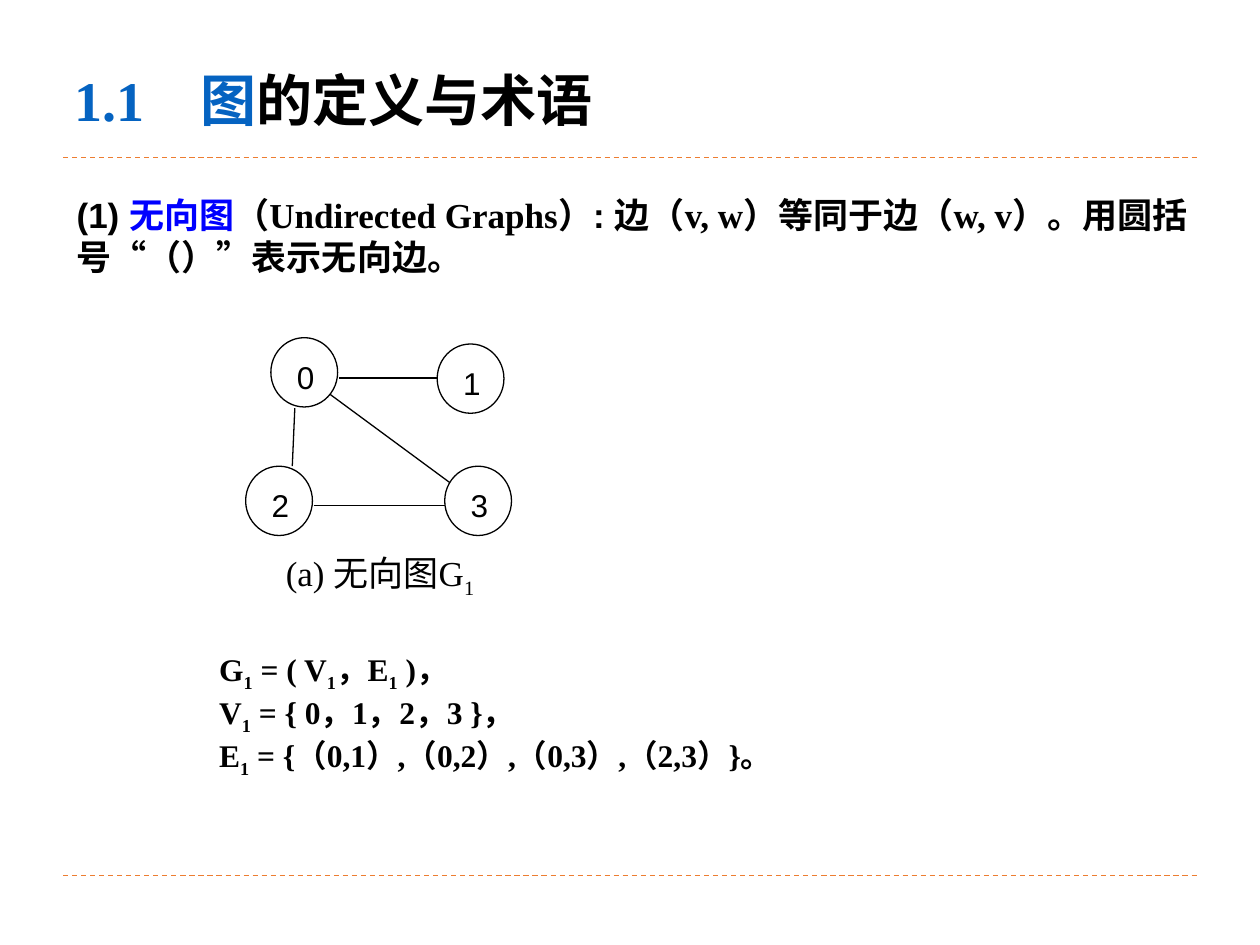
from lxml import etree
from pptx import Presentation
from pptx.dml.color import RGBColor
from pptx.enum.dml import MSO_LINE
from pptx.enum.shapes import MSO_CONNECTOR, MSO_SHAPE
from pptx.enum.text import MSO_ANCHOR, MSO_AUTO_SIZE, PP_ALIGN
from pptx.oxml.ns import qn
from pptx.util import Inches, Pt

DASH = MSO_LINE.DASH
STRAIGHT = MSO_CONNECTOR.STRAIGHT
OVAL, RECTANGLE = MSO_SHAPE.OVAL, MSO_SHAPE.RECTANGLE
TOP, LEFT, CENTER = MSO_ANCHOR.TOP, PP_ALIGN.LEFT, PP_ALIGN.CENTER
NO_AUTOFIT = MSO_AUTO_SIZE.NONE

COLORS = {"ink": "000000", "paper": "FFFFFF", "rule": "ED7D31",
          "heading": "0563C1", "term": "0000FF"}
SERIF, SANS = "Times New Roman", "Arial"


def rgb(name):
    return RGBColor.from_string(COLORS[name])


def add_run(paragraph, text, size, color="ink", font=SERIF, bold=False):
    run = paragraph.add_run()
    run.text = text
    run.font.size = Pt(size)
    run.font.name = font
    run.font.bold = bold
    run.font.color.rgb = rgb(color)
    return run


def add_indexed(paragraph, text, size, bold=False):
    """Write text in which every second part between underscores is a subscript."""
    for i, part in enumerate(text.split("_")):
        run = add_run(paragraph, part, size, bold=bold)
        if i % 2:
            run._r.get_or_add_rPr().set("baseline", "-25000")


def add_text_frame(slide, left, top, width, height):
    box = slide.shapes.add_textbox(Inches(left), Inches(top), Inches(width), Inches(height))
    box.text_frame.word_wrap = True
    return box.text_frame


def add_line(shapes, start, end, color="ink", dash=None):
    line = shapes.add_connector(STRAIGHT, *(Inches(v) for v in (*start, *end)))
    line.line.color.rgb = rgb(color)
    line.line.width = Pt(0.75)
    if dash is not None:
        line.line.dash_style = dash
    etree.SubElement(line._element.spPr, qn("a:effectLst"))


def add_plain_shape(shapes, kind, left, top, width, height):
    shape = shapes.add_shape(kind, Inches(left), Inches(top), Inches(width), Inches(height))
    shape.shadow.inherit = False
    shape.fill.solid()
    shape.fill.fore_color.rgb = rgb("paper")
    return shape


def add_node(shapes, label, left, top):
    circle = add_plain_shape(shapes, OVAL, left, top, 0.53, 0.55)
    circle.line.color.rgb = rgb("ink")
    circle.line.width = Pt(0.75)
    tag = add_plain_shape(shapes, RECTANGLE, left + 0.17, top + 0.16, 0.21, 0.24)
    tag.line.fill.background()
    frame = tag.text_frame
    frame.margin_left = frame.margin_right = frame.margin_top = frame.margin_bottom = 0
    frame.vertical_anchor = TOP
    frame.paragraphs[0].alignment = CENTER
    add_run(frame.paragraphs[0], label, 18, font=SANS)


def add_graph(slide, left, top):
    nodes = {"0": (0.2, 0), "1": (1.52, 0.05), "2": (0, 1.02), "3": (1.58, 1.02)}
    edges = [((0.74, 0.32), (1.52, 0.32)), ((0.67, 0.45), (1.62, 1.15)),
             ((0.39, 0.56), (0.37, 1.02)), ((0.54, 1.33), (1.58, 1.33))]
    shapes = slide.shapes.add_group_shape().shapes
    for edge in edges:
        add_line(shapes, *((left + x, top + y) for x, y in edge))
    for label, (x, y) in nodes.items():
        add_node(shapes, label, left + x, top + y)


def add_title(slide, left, top, width, height):
    title = slide.shapes.title
    title.left, title.top = Inches(left), Inches(top)
    title.width, title.height = Inches(width), Inches(height)
    frame = title.text_frame
    frame.auto_size = NO_AUTOFIT
    frame.vertical_anchor = TOP
    frame.margin_left, frame.margin_right = Inches(0.12), Inches(0.16)
    heading = frame.paragraphs[0]
    heading.alignment = LEFT
    tabs = etree.SubElement(heading._p.get_or_add_pPr(), qn("a:tabLst"))
    etree.SubElement(tabs, qn("a:tab"), pos=str(Inches(1)), algn="l")
    add_run(heading, "1.1\t图", 32, "heading", bold=True)
    add_run(heading, "的定义与术语", 32, bold=True)


def add_definition(slide, left, top, width, height):
    paragraph = add_text_frame(slide, left, top, width, height).paragraphs[0]
    for text, color, font in [
            ("(1) ", "ink", SANS), ("无向图", "term", SERIF),
            ("（Undirected Graphs）", "ink", SERIF), (": ", "ink", SANS),
            ("边（v, w）等同于边（w, v）。用圆括号“（）”表示无向边。", "ink", SERIF)]:
        add_run(paragraph, text, 20, color, font, bold=True)


def add_caption(slide, left, top, width, height):
    frame = add_text_frame(slide, left, top, width, height)
    add_indexed(frame.paragraphs[0], "(a) 无向图G_1", 20)


def add_formulas(slide, left, top, width, height):
    frame = add_text_frame(slide, left, top, width, height)
    formulas = ["G_1_ = ( V_1_，E_1_ )，",
                "V_1_ = { 0，1，2，3 }，",
                "E_1_ = {（0,1）,（0,2）,（0,3）,（2,3）}。"]
    for i, formula in enumerate(formulas):
        paragraph = frame.add_paragraph() if i else frame.paragraphs[0]
        add_indexed(paragraph, formula, 18, bold=True)


def main():
    prs = Presentation()
    prs.slide_width, prs.slide_height = Inches(10), Inches(7.5)
    slide = prs.slides.add_slide(prs.slide_layouts[5])
    for y in (1.25, 6.95):
        add_line(slide.shapes, (0.5, y), (9.5, y), "rule", DASH)
    add_title(slide, 0.47, 0.47, 6.95, 0.64)
    add_definition(slide, 0.51, 1.49, 9.33, 0.77)
    add_graph(slide, 1.95, 2.68)
    add_caption(slide, 2.17, 4.33, 2.84, 0.44)
    add_formulas(slide, 1.64, 5.11, 5.78, 1.01)
    prs.save("out.pptx")


if __name__ == "__main__":
    main()
